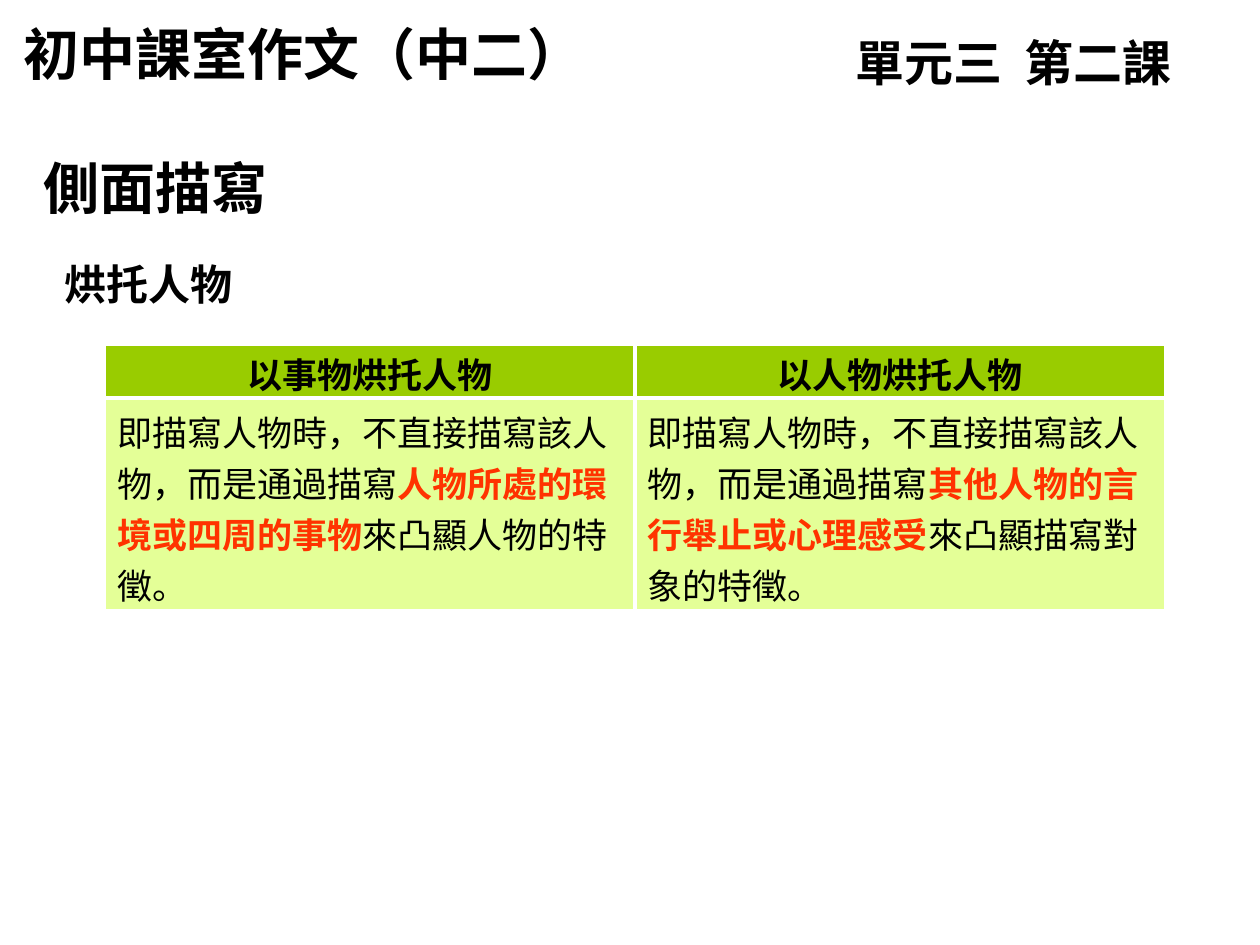
from pptx import Presentation
from pptx.dml.color import RGBColor as Rgb
from pptx.enum.text import MSO_ANCHOR as Anchor, PP_ALIGN as Align
from pptx.oxml import parse_xml
from pptx.oxml.ns import nsdecls
from pptx.util import Inches, Pt

COLORS = {"ink": "000000", "accent": "FF3300", "head": "99CC00",
          "body": "E4FF97", "border": "FFFFFF"}
CJK_FONT = "Noto Sans CJK TC"


def add_text(paragraph, text, size=20, font="Arial", color="ink", bold=False):
    """Add one formatted run to a paragraph."""
    run = paragraph.add_run()
    run.text = text
    run.font.size = Pt(size)
    run.font.bold = bold
    run.font.color.rgb = Rgb.from_string(COLORS[color])
    run.font.name = font
    run.font._element.append(
        parse_xml(f'<a:ea {nsdecls("a")} typeface="{CJK_FONT}"/>'))


class LessonSlide:
    def __init__(self, deck):
        self.slide = deck.slides.add_slide(deck.slide_layouts[6])

    def heading(self, text, left, top, width, height, **style):
        box = self.slide.shapes.add_textbox(
            Inches(left), Inches(top), Inches(width), Inches(height))
        box.text_frame.word_wrap = True
        add_text(box.text_frame.paragraphs[0], text, bold=True, **style)

    def cell(self, cell, runs, fill, align, top_margin):
        cell.fill.solid()
        cell.fill.fore_color.rgb = Rgb.from_string(COLORS[fill])
        cell.vertical_anchor = Anchor.MIDDLE
        cell.margin_top, cell.margin_bottom = Inches(top_margin), 0
        paragraph = cell.text_frame.paragraphs[0]
        paragraph.alignment = align
        for text, style in runs:
            add_text(paragraph, text, **style)
        # Borders come before the fill in the cell properties
        for index, side in enumerate("LRTB"):
            cell._tc.tcPr.insert(index, parse_xml(
                f'<a:ln{side} {nsdecls("a")} w="{Pt(2.25)}"><a:solidFill>'
                f'<a:srgbClr val="{COLORS["border"]}"/></a:solidFill></a:ln{side}>'))

    def comparison(self, columns, left, top, column_width, row_heights):
        table = self.slide.shapes.add_table(
            2, len(columns), Inches(left), Inches(top),
            Inches(column_width * len(columns)), Inches(sum(row_heights))).table
        table.first_row = table.horz_banding = False
        for row, height in zip(table.rows, row_heights):
            row.height = Inches(height)
        for index, (title, before, key_phrase, after) in enumerate(columns):
            table.columns[index].width = Inches(column_width)
            self.cell(table.cell(0, index), [(title, {"bold": True})],
                      "head", Align.CENTER, 0.03)
            self.cell(table.cell(1, index),
                      [(before, {}),
                       (key_phrase, {"color": "accent", "bold": True}),
                       (after, {})],
                      "body", Align.LEFT, 0.05)


def main():
    deck = Presentation()
    deck.slide_width, deck.slide_height = Inches(10), Inches(7.5)
    lesson = LessonSlide(deck)

    # Course, unit and topic headings
    lesson.heading("側面描寫", 0.25, 1.17, 3.08, 0.63, size=32)
    lesson.heading("單元三  第二課", 6.69, 0.21, 3.35, 0.57, size=28, font="Roboto")
    lesson.heading("初中課室作文（中二）", 0.09, 0.11, 5.22, 0.63, size=32, font="Roboto")
    lesson.heading("烘托人物", 0.41, 2, 3.88, 0.58, size=24, font=CJK_FONT)

    # Two ways of setting off a character
    opening = "即描寫人物時，不直接描寫該人物，而是通過描寫"
    lesson.comparison(
        [("以事物烘托人物", opening, "人物所處的環境或四周的事物", "來凸顯人物的特徵。"),
         ("以人物烘托人物", opening, "其他人物的言行舉止或心理感受", "來凸顯描寫對象的特徵。")],
        left=0.83, top=2.73, column_width=4.21, row_heights=(0.43, 1.69))

    deck.save("out.pptx")


if __name__ == "__main__":
    main()
